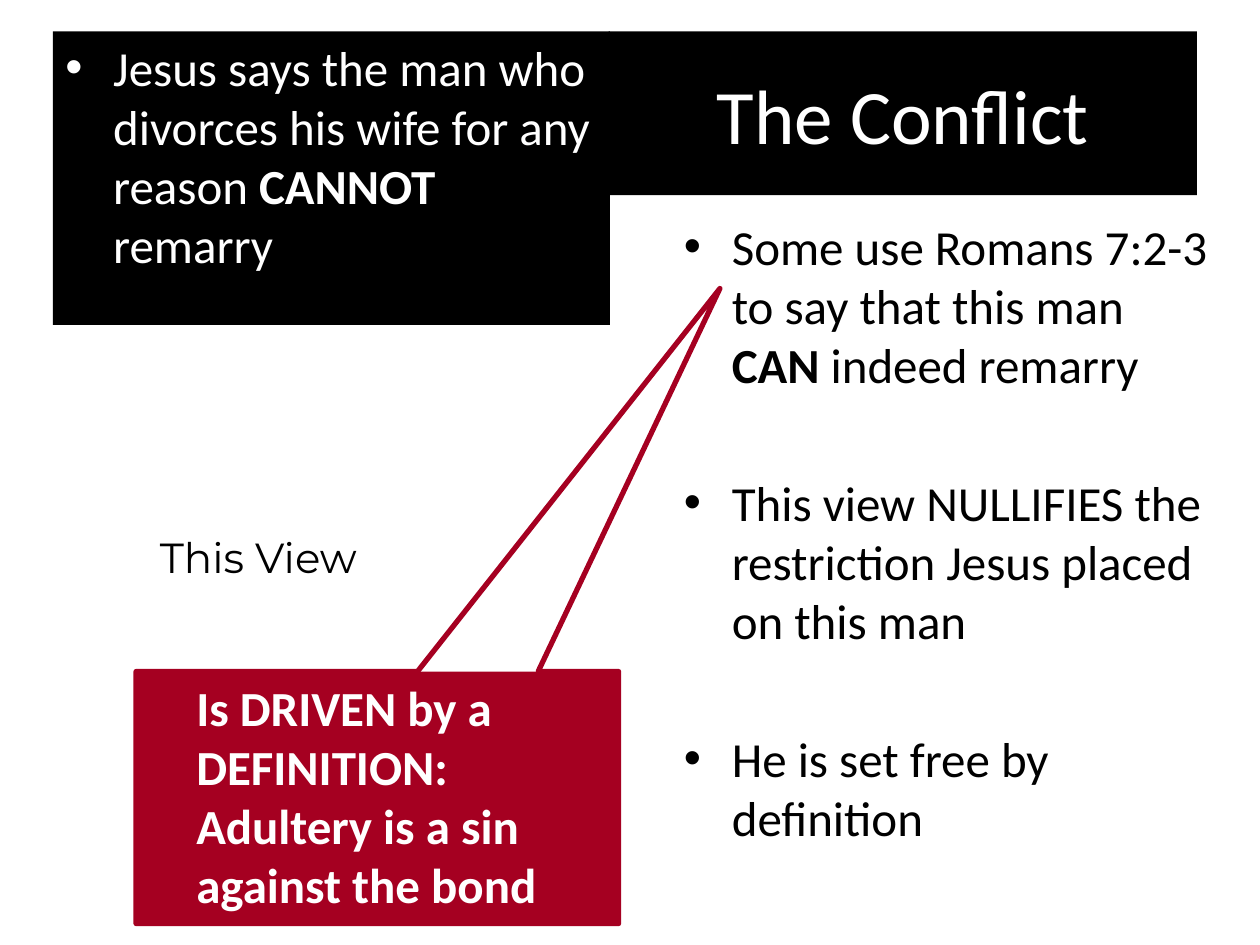
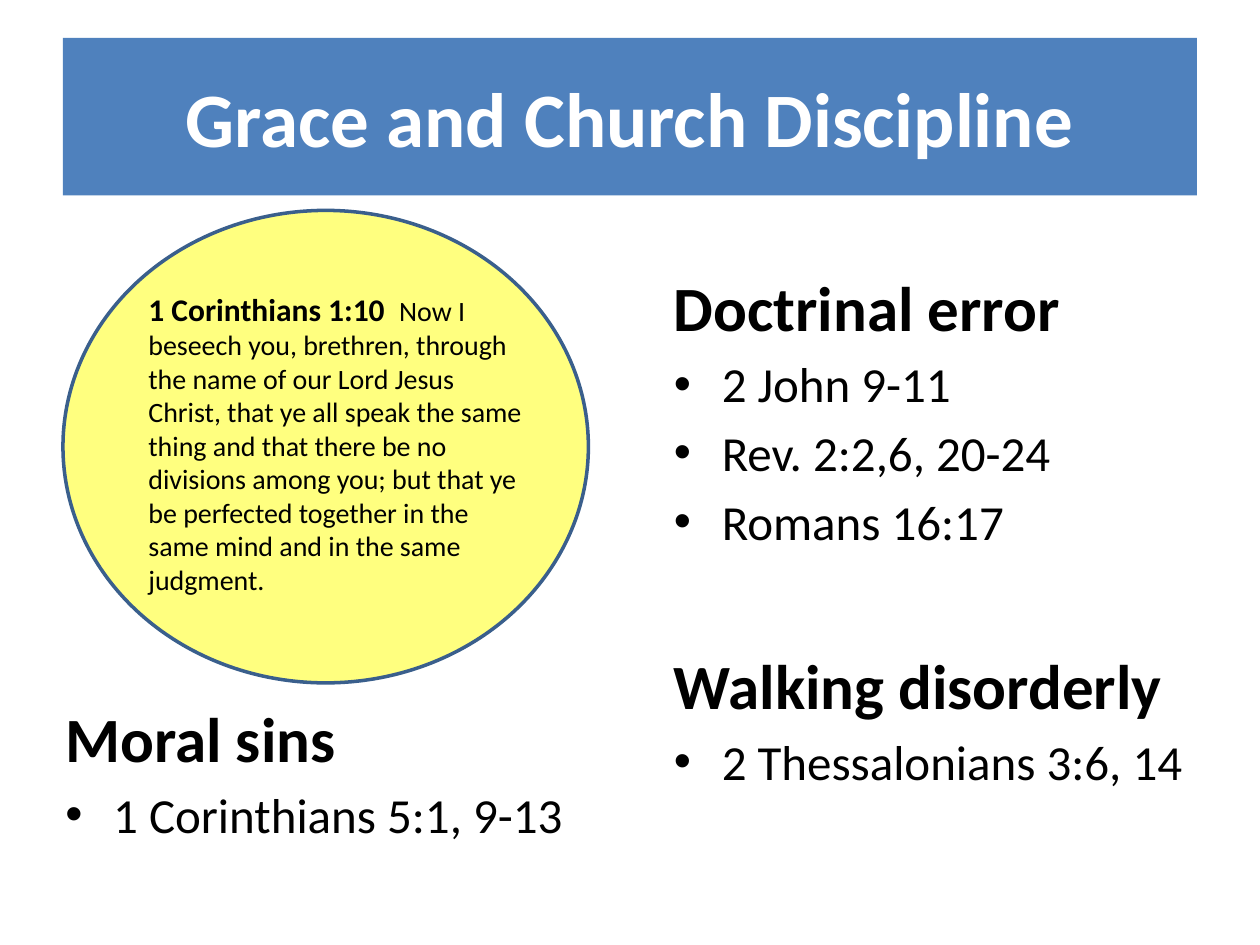
from lxml import etree
from pptx import Presentation
from pptx import util as u
from pptx.dml.color import RGBColor
from pptx.enum import shapes, text
from pptx.oxml.ns import qn

COLORS = {
    "black": "000000",
    "white": "FFFFFF",
    "crimson": "A50021",
    "blue": "4F81BD",
    "yellow": "FFFF00",
    "navy": "3A5F8C",
}
BODY_FONT, LABEL_FONT = "Calibri", "Montserrat"
TITLE_SIZE, HEADING_SIZE, BODY_SIZE = 44, 36, 28
INDENT = 0.38
COLUMN_WIDTH = 4.42
SPACE_SHARE = 0.2    # space before a paragraph, as a share of its text size
BLOCK_GAP = 45.4     # points before a point that stands apart


def color(name):
    return RGBColor.from_string(COLORS[name])


# Shapes and text boxes
def add_box(page, area, fill=None, line=None, line_width=1,
            kind=shapes.MSO_SHAPE.RECTANGLE):
    """Add a preset shape, with no fill or line unless they are named."""
    box = page.shapes.add_shape(kind, *map(u.Inches, area))
    box.shadow.inherit = False
    if fill:
        box.fill.solid()
        box.fill.fore_color.rgb = color(fill)
    else:
        box.fill.background()
    if line:
        box.line.color.rgb = color(line)
        box.line.width = u.Pt(line_width)
    else:
        box.line.fill.background()
    box.text_frame.word_wrap = True
    box.text_frame.vertical_anchor = text.MSO_ANCHOR.TOP
    return box


def add_text_box(page, area, wrap=True):
    box = page.shapes.add_textbox(*map(u.Inches, area))
    box.text_frame.word_wrap = wrap
    return box


# Paragraphs and runs
def add_para(box, spans, size=BODY_SIZE, ink="black", font=BODY_FONT,
             align=text.PP_ALIGN.LEFT):
    """Write (words, bold) or (words, bold, size) spans as one paragraph."""
    frame = box.text_frame
    para = frame.paragraphs[0]
    if para.runs:
        para = frame.add_paragraph()
    para.alignment = align
    for words, bold, *own_size in spans:
        span = para.add_run()
        span.text = words
        span.font.name = font
        span.font.size = u.Pt(own_size[0] if own_size else size)
        span.font.bold = bold
        span.font.color.rgb = color(ink)
    return para


def indent(para, hanging, bullet=False):
    props = para._p.get_or_add_pPr()
    props.set("marL", str(u.Inches(INDENT)))
    props.set("indent", str(-u.Inches(INDENT) if hanging else 0))
    if bullet:
        etree.SubElement(props, qn("a:buFont")).set("typeface", "Arial")
        etree.SubElement(props, qn("a:buChar")).set("char", "•")


def add_bullet(box, spans, ink="black", gap=BODY_SIZE * SPACE_SHARE):
    para = add_para(box, spans, ink=ink)
    para.space_before = u.Pt(gap)
    indent(para, hanging=True, bullet=True)


def add_title(page, area, words, fill, bold=False):
    box = add_box(page, area, fill)
    box.text_frame.vertical_anchor = text.MSO_ANCHOR.MIDDLE
    add_para(box, [(words, bold)], TITLE_SIZE, "white",
             align=text.PP_ALIGN.CENTER)


def add_topic(page, area, heading, references):
    """A bold heading with a bulleted list of references."""
    box = add_text_box(page, area)
    indent(add_para(box, [(heading, True)], HEADING_SIZE), hanging=True)
    for reference in references:
        add_bullet(box, [(reference, False)])


def outline_text(para, ink, width):
    for span in para.runs:
        line = etree.Element(qn("a:ln"), w=str(u.Pt(width)))
        fill = etree.SubElement(line, qn("a:solidFill"))
        etree.SubElement(fill, qn("a:srgbClr")).set("val", COLORS[ink])
        span._r.get_or_add_rPr().insert(0, line)


def set_opacity(box, percent):
    tint = box._element.spPr.find(qn("a:solidFill"))[0]
    etree.SubElement(tint, qn("a:alpha")).set("val", str(percent * 1000))


# Slides
def build_conflict(page):
    definition_area = (1.08, 5.33, 3.83, 2)
    pointer = add_box(page, definition_area, "white", "crimson", 3,
                      shapes.MSO_SHAPE.RECTANGULAR_CALLOUT)
    pointer.adjustments[0] = 0.71
    pointer.adjustments[1] = -2.02

    add_title(page, (4.83, 0.25, 4.67, 1.3), "The Conflict", "black")

    saying = add_box(page, (0.42, 0.25, COLUMN_WIDTH, 2.33), "black")
    add_bullet(saying, [
        ("Jesus says the man who divorces his wife for any reason ", False),
        ("CANNOT", True), (" remarry", False)], "white")

    view = add_text_box(page, (5.33, 1.67, COLUMN_WIDTH, 5.67))
    add_bullet(view, [("Some use Romans 7:2-3 to say that this man ", False),
                      ("CAN", True), (" indeed remarry", False)])
    for point in (
            "This view NULLIFIES the restriction Jesus placed on this man",
            "He is set free by definition"):
        add_bullet(view, [(point, False)], gap=BLOCK_GAP)

    definition = add_box(page, definition_area, "crimson")
    indent(add_para(definition, [
        ("Is DRIVEN by a DEFINITION: Adultery is a sin against the bond",
         True)], ink="white"), hanging=False)

    label = add_text_box(page, (1.17, 4.17, 2.38, 1.06), wrap=False)
    outline_text(add_para(label, [("This View", False)], 24, font=LABEL_FONT),
                 "black", 0.75)


def build_discipline(page):
    add_title(page, (0.5, 0.3, 9, 1.25), "Grace and Church Discipline",
              "blue", bold=True)

    add_topic(page, (0.42, 5.5, COLUMN_WIDTH, 1.5), "Moral sins",
              ["1 Corinthians 5:1, 9-13"])
    add_topic(page, (5.25, 2.08, COLUMN_WIDTH, 2.58), "Doctrinal error",
              ["2 John 9-11", "Rev. 2:2,6, 20-24", "Romans 16:17"])
    add_topic(page, (5.25, 5.08, COLUMN_WIDTH, 1.5), "Walking disorderly",
              ["2 Thessalonians 3:6, 14"])

    # Verse in the oval
    oval = add_box(page, (0.5, 1.67, 4.17, 3.75), "yellow", "navy", 2,
                   shapes.MSO_SHAPE.OVAL)
    set_opacity(oval, 50)
    verse = add_text_box(page, (1.08, 2.25, 3.17, 2.56))
    add_para(verse, [
        ("1 Corinthians 1:10  ", True, 18),
        ("Now I beseech you, brethren, through the name of our Lord Jesus "
         "Christ, that ye all speak the same thing and that there be no "
         "divisions among you; but that ye be perfected together in the "
         "same mind and in the same judgment.", False, 16)])


def main():
    deck = Presentation()
    deck.slide_width, deck.slide_height = u.Inches(10), u.Inches(7.5)
    blank = deck.slide_layouts[6]
    for build in (build_conflict, build_discipline):
        build(deck.slides.add_slide(blank))
    deck.save("out.pptx")


if __name__ == "__main__":
    main()
